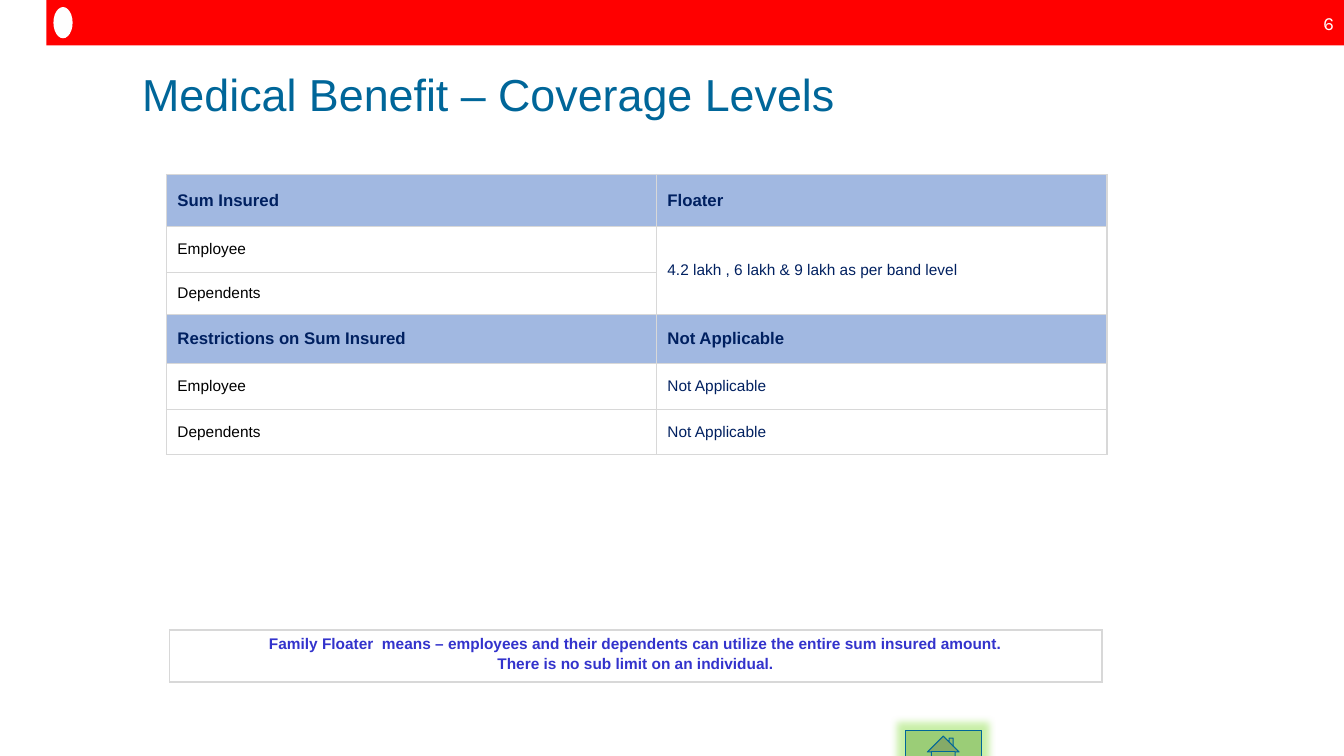
import dataclasses
import typing

import pptx
import pptx.dml.color
import pptx.enum.shapes
import pptx.enum.text
import pptx.oxml
import pptx.oxml.ns
import pptx.util

SCALE = 9144
NAVY = "002060"
BLUE = "4472C4"
SHAPES = pptx.enum.shapes.MSO_SHAPE
ALIGN = pptx.enum.text.PP_ALIGN
ANCHOR = pptx.enum.text.MSO_ANCHOR


@dataclasses.dataclass
class Box:
    left: int
    top: int
    width: int
    height: int


@dataclasses.dataclass
class Row:
    height: int
    label: str
    value: str
    head: bool = False


def px(count: int) -> int:
    return pptx.util.Emu(count * SCALE)


def place(box: Box) -> list[int]:
    return [px(side) for side in dataclasses.astuple(box)]


def color(code: str) -> pptx.dml.color.RGBColor:
    return pptx.dml.color.RGBColor.from_string(code)


def node(text: str) -> typing.Any:
    return pptx.oxml.parse_xml(text.replace(">", f" {pptx.oxml.ns.nsdecls('a')}>", 1))


def paint(fill: typing.Any, code: str, parent: typing.Any, alpha: int = 100) -> None:
    fill.solid()
    fill.fore_color.rgb = color(code)
    if alpha < 100:
        solid = parent.find(pptx.oxml.ns.qn("a:solidFill"))
        solid[0].append(node(f'<a:alpha val="{alpha * 1000}"></a:alpha>'))


def write(frame: typing.Any, text: str, *, size: float, code: str, font: str = "Arial",
          bold: bool = False, align: typing.Any = ALIGN.LEFT, gap: int = 0) -> None:
    frame.word_wrap = True
    for index, line in enumerate(text.split("\n")):
        para = frame.add_paragraph() if index else frame.paragraphs[0]
        para.text = line
        para.alignment = align
        para.space_before = pptx.util.Pt(gap if index else 0)
        para.font.name = font
        para.font.size = pptx.util.Pt(size)
        para.font.bold = bold
        para.font.color.rgb = color(code)


def draw(slide: typing.Any, kind: typing.Any, box: Box, code: str, alpha: int = 100) -> typing.Any:
    shape = slide.shapes.add_shape(kind, *place(box))
    shape.shadow.inherit = False
    paint(shape.fill, code, shape._element.spPr, alpha)
    shape.line.fill.background()
    return shape


def grid(slide: typing.Any, box: Box, widths: list[int], heights: list[int]) -> typing.Any:
    frame = slide.shapes.add_table(len(heights), len(widths), *place(box))
    table = frame.table
    table.first_row = False
    table.horz_banding = False
    for column, width in zip(table.columns, widths):
        column.width = px(width)
    for row, height in zip(table.rows, heights):
        row.height = px(height)
    for cell in table.iter_cells():
        cell.fill.background()
        props = cell._tc.get_or_add_tcPr()
        for index, side in enumerate("LRTB"):
            props.insert(index, node(
                f'<a:ln{side} w="12700"><a:solidFill><a:srgbClr val="D8D8D8"/>'
                f'</a:solidFill></a:ln{side}>'))
        cell.margin_left = cell.margin_right = px(11)
        cell.margin_top = cell.margin_bottom = px(5)
        cell.vertical_anchor = ANCHOR.MIDDLE
    return table


def levels(slide: typing.Any) -> None:
    rows = [
        Row(52, "Sum Insured", "Floater", True),
        Row(45, "Employee", "4.2 lakh , 6 lakh & 9 lakh as per band level"),
        Row(42, "Dependents", ""),
        Row(49, "Restrictions on Sum Insured", "Not Applicable", True),
        Row(45, "Employee", "Not Applicable"),
        Row(45, "Dependents", "Not Applicable"),
    ]
    heights = [row.height for row in rows]
    table = grid(slide, Box(165, 173, 933, sum(heights)), [486, 447], heights)
    table.cell(1, 1).merge(table.cell(2, 1))
    for index, row in enumerate(rows):
        for side, text in enumerate((row.label, row.value)):
            cell = table.cell(index, side)
            props = cell._tc.get_or_add_tcPr()
            if row.head:
                paint(cell.fill, BLUE, props, 50)
            elif side == 0:
                paint(cell.fill, "FFFFFF", props)
            if text:
                write(cell.text_frame, text, size=12 if row.head else 11, bold=row.head,
                      code=NAVY if row.head or side else "000000")


def note(slide: typing.Any) -> None:
    cell = grid(slide, Box(168, 625, 925, 51), [925], [51]).cell(0, 0)
    cell.margin_top = cell.margin_bottom = px(6)
    cell.vertical_anchor = ANCHOR.TOP
    write(cell.text_frame,
          "Family Floater  means – employees and their dependents can utilize "
          "the entire sum insured amount.\nThere is no sub limit on an individual.",
          size=11, code="3333CC", bold=True, align=ALIGN.CENTER, gap=2)


def home(slide: typing.Any) -> None:
    button = draw(slide, SHAPES.ACTION_BUTTON_HOME, Box(898, 725, 75, 42), "70AD47", 50)
    button.line.color.rgb = color("006699")
    button.line.width = pptx.util.Pt(0.75)
    effects = button._element.spPr.find(pptx.oxml.ns.qn("a:effectLst"))
    effects.append(node('<a:glow rad="139700"><a:srgbClr val="92E050">'
                        '<a:alpha val="50000"/></a:srgbClr></a:glow>'))


def main() -> None:
    deck = pptx.Presentation()
    deck.slide_width, deck.slide_height = px(1333), px(750)
    slide = deck.slides.add_slide(deck.slide_layouts[5])

    draw(slide, SHAPES.RECTANGLE, Box(46, 0, 1287, 45), "FF0000")
    draw(slide, SHAPES.OVAL, Box(53, 7, 19, 31), "FEFEFE")
    number = slide.shapes.add_textbox(*place(Box(1284, 6, 49, 33))).text_frame
    number.vertical_anchor = ANCHOR.MIDDLE
    write(number, "6", size=13.3, code="FFFFFF", font="Karla", align=ALIGN.RIGHT)

    title = slide.shapes.title
    title.left, title.top, title.width, title.height = place(Box(131, 56, 750, 61))
    frame = title.text_frame
    frame.auto_size = pptx.enum.text.MSO_AUTO_SIZE.NONE
    frame.vertical_anchor = ANCHOR.TOP
    frame.margin_left = frame.margin_right = frame.margin_top = px(10)
    frame.margin_bottom = 0
    write(frame, "Medical Benefit – Coverage Levels", size=32, code="006699")

    levels(slide)
    note(slide)
    home(slide)
    deck.save("out.pptx")


if __name__ == "__main__":
    main()
